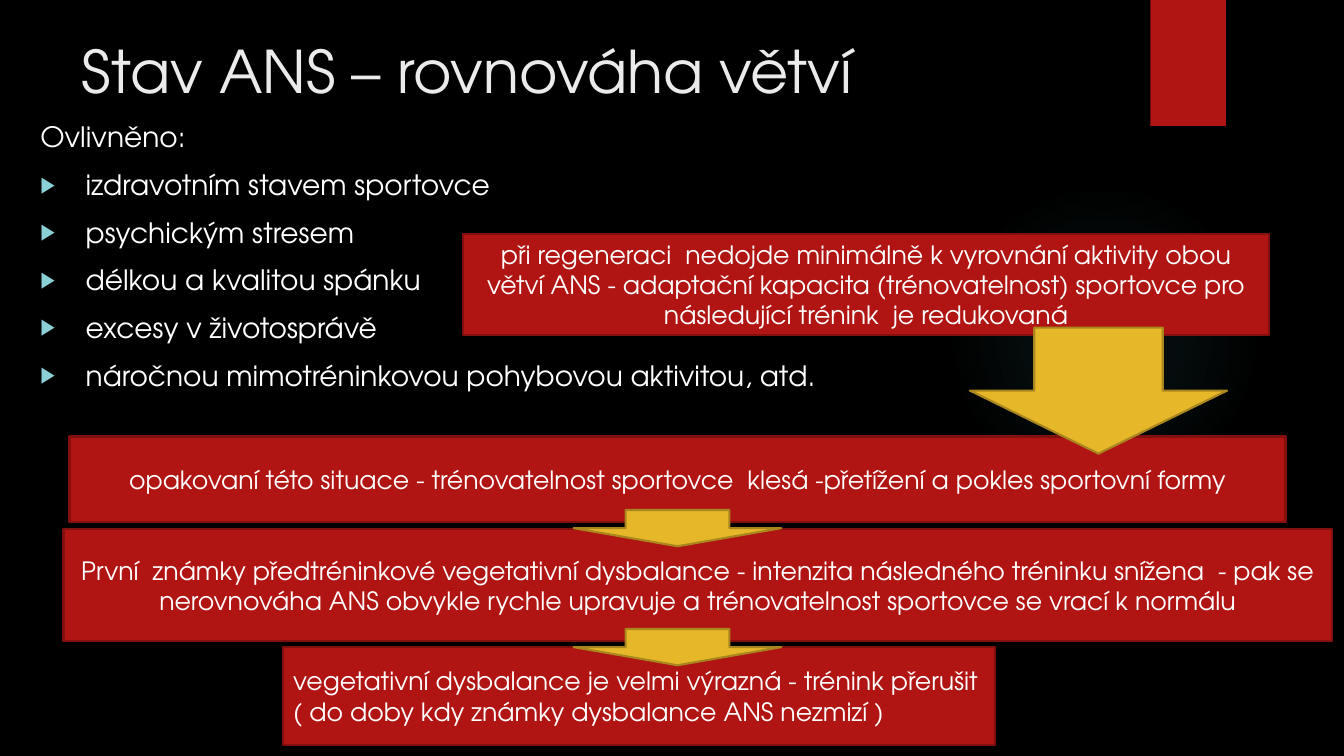
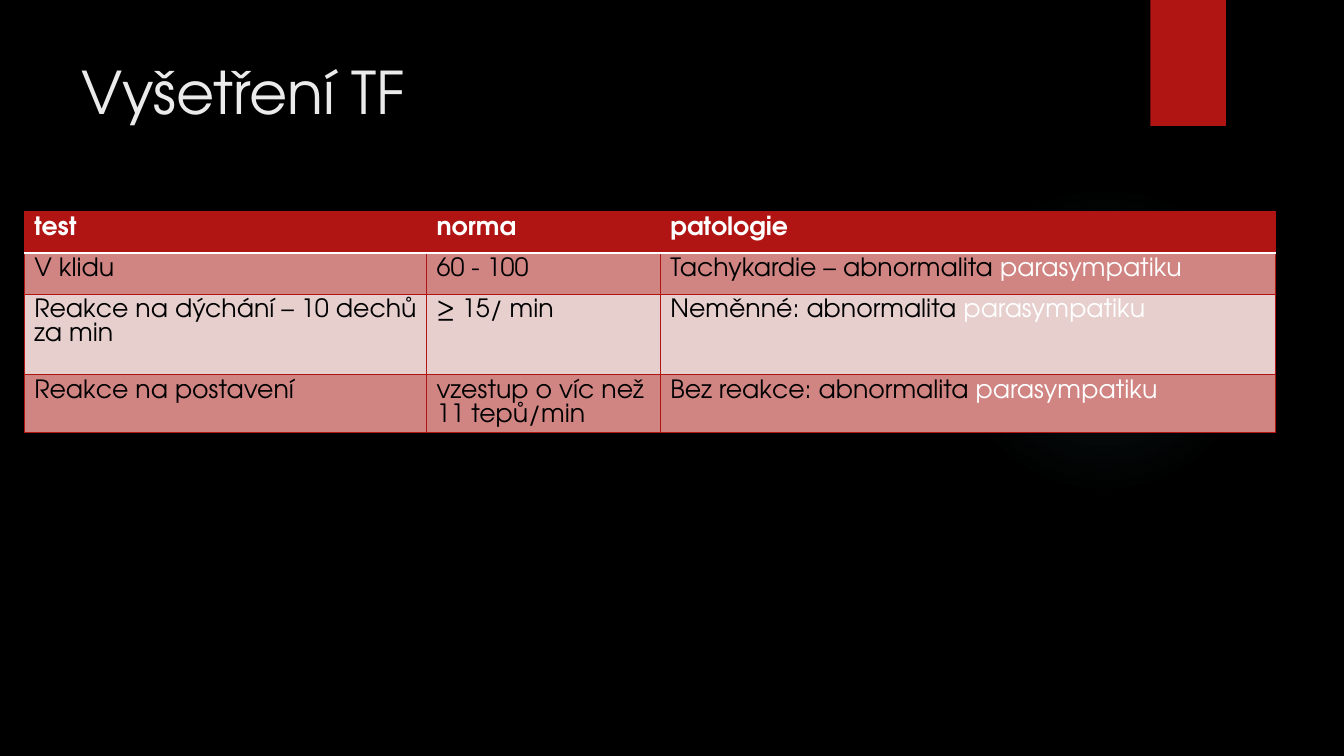
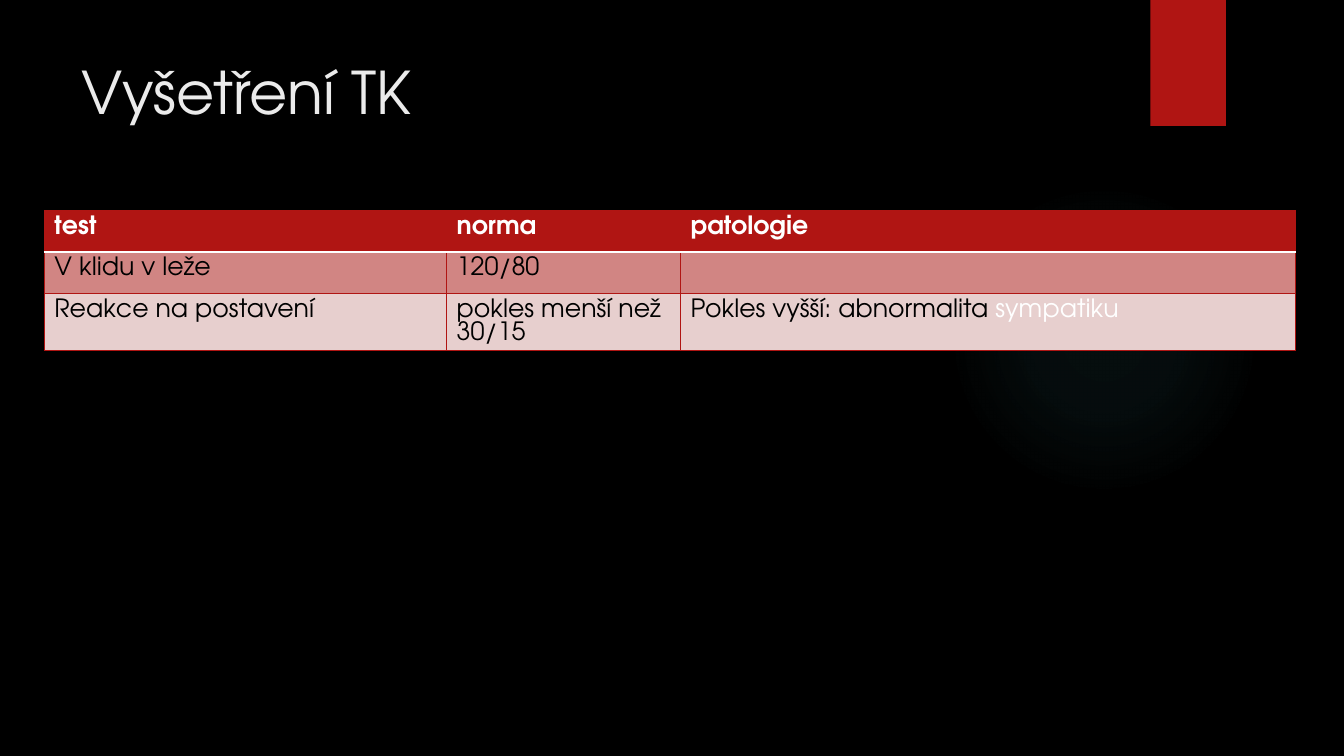
from lxml.etree import SubElement
from pptx import Presentation
from pptx.dml.color import RGBColor
from pptx.enum.shapes import MSO_SHAPE as Shape
from pptx.enum.text import MSO_ANCHOR as Anchor, MSO_AUTO_SIZE as AutoSize, PP_ALIGN as Align
from pptx.oxml import parse_xml
from pptx.oxml.ns import nsdecls, qn
from pptx.util import Inches, Pt

FONT = "TeX Gyre Adventor"
COLORS = {
    "background": "000000",
    "title": "EBEBEB",
    "light": "FFFFFF",
    "dark": "000000",
    "red": "B01513",
    "red_edge": "82100E",
    "yellow": "E6B729",
    "yellow_edge": "AA871E",
    "bullet": "8AD0D6",
    "glow": "50B9C1",
    "band_odd": "D18583",
    "band_even": "E7CFCE",
}
GLOW_STOPS = [(0, 7), (36, 6), (69, 0)]
COLUMN_WIDTHS = [3.99, 2.32, 6.1]
TABLE_HEADER = ["test", "norma", "patologie"]

INFLUENCES = [
    "izdravotním stavem sportovce",
    "psychickým stresem",
    "délkou a kvalitou spánku",
    "excesy v životosprávě",
    "náročnou mimotréninkovou pohybovou aktivitou, atd.",
]
STAGES = [
    ((4.59, 2.32, 8, 1), Align.CENTER,
     "při regeneraci  nedojde minimálně k vyrovnání aktivity obou větví ANS - adaptační "
     "kapacita (trénovatelnost) sportovce pro následující trénink  je redukovaná"),
    ((0.69, 4.33, 12.06, 0.85), Align.CENTER,
     "opakovaní této situace - trénovatelnost sportovce  klesá -přetížení a pokles sportovní formy"),
    ((0.63, 5.25, 12.58, 1.11), Align.CENTER,
     "První  známky předtréninkové vegetativní dysbalance - intenzita následného tréninku "
     "snížena  - pak se nerovnováha ANS obvykle rychle upravuje a trénovatelnost sportovce "
     "se vrací k normálu"),
    ((2.81, 6.42, 7.06, 0.97), Align.LEFT,
     "vegetativní dysbalance je velmi výrazná - trénink přerušit\n"
     "( do doby kdy známky dysbalance ANS nezmizí )"),
]
ARROWS = [(9.62, 3.25, 2.55, 1.25), (5.69, 5.06, 2.06, 0.36), (5.69, 6.24, 2.06, 0.36)]
PULSE_ROWS = [
    ["V klidu", "60 - 100", ("Tachykardie – abnormalita ", "parasympatiku")],
    ["Reakce na dýchání – 10 dechů za min", "≥ 15/ min",
     ("Neměnné: abnormalita ", "parasympatiku")],
    ["Reakce na postavení", "vzestup o víc než 11 tepů/min",
     ("Bez reakce: abnormalita ", "parasympatiku")],
]
PRESSURE_ROWS = [
    ["V klidu v leže", "120/80", ""],
    ["Reakce na postavení", "pokles menší než 30/15",
     ("Pokles vyšší: abnormalita ", "sympatiku")],
]


def color(key):
    """Return the named colour."""
    return RGBColor.from_string(COLORS[key])


def set_font(paragraph, size, key, bold=False):
    """Format a whole paragraph."""
    font = paragraph.font
    font.name, font.size, font.bold = FONT, Pt(size), bold
    font.color.rgb = color(key)


def place(placeholder, box):
    """Move a placeholder and anchor its text at the top."""
    placeholder.left, placeholder.top, placeholder.width, placeholder.height = map(Inches, box)
    frame = placeholder.text_frame
    frame.word_wrap, frame.auto_size = True, AutoSize.NONE
    frame.vertical_anchor = Anchor.TOP
    return frame


def add_preset(slide, preset, box, fill=None, edge=None):
    """Add a flat preset shape."""
    shape = slide.shapes.add_shape(preset, *map(Inches, box))
    shape.shadow.inherit = False
    if fill:
        shape.fill.solid()
        shape.fill.fore_color.rgb = color(fill)
    if edge:
        shape.line.color.rgb = color(edge)
        shape.line.width = Pt(1.5)
    else:
        shape.line.fill.background()
    return shape


def style_master(prs, slide):
    """Give the master its background, glow and red tag."""
    master = prs.slide_master
    master.background.fill.solid()
    master.background.fill.fore_color.rgb = color("background")
    glow = add_preset(slide, Shape.OVAL, (9.41, 1.83, 3.08, 3.08))
    glow.fill.background()
    stops = "".join(
        f'<a:gs pos="{pos * 1000}"><a:srgbClr val="{COLORS["glow"]}">'
        f'<a:alpha val="{alpha * 1000}"/></a:srgbClr></a:gs>'
        for pos, alpha in GLOW_STOPS)
    gradient = parse_xml(
        f'<a:gradFill {nsdecls("a")}><a:gsLst>{stops}</a:gsLst><a:path path="circle">'
        '<a:fillToRect l="50000" t="50000" r="50000" b="50000"/></a:path></a:gradFill>')
    properties = glow.element.spPr
    properties.replace(properties.find(qn("a:noFill")), gradient)
    tag = add_preset(slide, Shape.RECTANGLE, (11.41, 0, 0.75, 1.25), "red")
    for offset, decoration in enumerate((glow, tag)):
        decoration.element.nvSpPr.cNvPr.set("id", str(100 + offset))
        master.shapes.element.insert(2 + offset, decoration.element)


def add_title(slide, text, top=0.5, height=1.53):
    """Fill the title placeholder."""
    frame = place(slide.shapes.title, (0.71, top, 10.29, height))
    frame.text = text
    frame.paragraphs[0].alignment = Align.LEFT
    set_font(frame.paragraphs[0], 42, "title")


def set_bullet(paragraph, bulleted):
    """Set the triangle bullet with its indent, or none."""
    properties = paragraph._p.get_or_add_pPr()
    indent = Inches(0.45) if bulleted else 0
    properties.set("marL", str(indent))
    properties.set("indent", str(-indent))
    if not bulleted:
        SubElement(properties, qn("a:buNone"))
        return
    tint = SubElement(properties, qn("a:buClr"))
    SubElement(tint, qn("a:srgbClr"), val=COLORS["bullet"])
    SubElement(properties, qn("a:buSzPct"), val="80000")
    SubElement(properties, qn("a:buChar"), char="▶")


def add_list(slide, heading, items):
    """Fill the body placeholder with a heading and bulleted items."""
    frame = place(slide.placeholders[1], (0.3, 1.14, 12.58, 5.69))
    frame.text = "\n".join([heading, *items])
    for index, paragraph in enumerate(frame.paragraphs):
        set_bullet(paragraph, index > 0)
        paragraph.space_before = Pt(10 if index else 0)
        set_font(paragraph, 20, "light")


def add_stage(slide, box, alignment, text):
    """Add a red box with text."""
    frame = add_preset(slide, Shape.RECTANGLE, box, "red", "red_edge").text_frame
    frame.word_wrap, frame.vertical_anchor = True, Anchor.MIDDLE
    frame.text = text
    for paragraph in frame.paragraphs:
        paragraph.alignment = alignment
        set_font(paragraph, 18, "light")


def set_borders(cell, row):
    """Draw red cell borders with a white rule under the header."""
    white_side = {0: "lnB", 1: "lnT"}.get(row)
    for side in ("lnL", "lnR", "lnT", "lnB"):
        key, width = ("light", 1.5) if side == white_side else ("red", 0.75)
        line = SubElement(cell._tc.get_or_add_tcPr(), qn(f"a:{side}"), w=str(Pt(width)))
        SubElement(SubElement(line, qn("a:solidFill")), qn("a:srgbClr"), val=COLORS[key])


def fill_cell(cell, row, content):
    """Write and format one table cell."""
    plain, *highlights = [content] if isinstance(content, str) else content
    set_borders(cell, row)
    cell.fill.solid()
    band = "band_odd" if row % 2 else "band_even"
    cell.fill.fore_color.rgb = color(band if row else "red")
    cell.margin_right = Inches(0.05)
    cell.text = plain
    paragraph = cell.text_frame.paragraphs[0]
    set_font(paragraph, 18, "dark" if row else "light", bold=row == 0)
    for text in highlights:
        run = paragraph.add_run()
        run.text = text
        run.font.color.rgb = color("light")


def add_test_table(slide, left, top, rows, heights):
    """Add a table of tests under the shared header."""
    table = slide.shapes.add_table(
        len(heights), len(COLUMN_WIDTHS), Inches(left), Inches(top),
        Inches(sum(COLUMN_WIDTHS)), Inches(sum(heights))).table
    for column, width in zip(table.columns, COLUMN_WIDTHS):
        column.width = Inches(width)
    for index, (contents, height) in enumerate(zip([TABLE_HEADER, *rows], heights)):
        table.rows[index].height = Inches(height)
        for cell, content in zip(table.rows[index].cells, contents):
            fill_cell(cell, index, content)


def main():
    """Build and save the presentation."""
    prs = Presentation()
    prs.slide_width, prs.slide_height = Inches(13.33), Inches(7.5)
    list_layout, title_layout = prs.slide_layouts[1], prs.slide_layouts[5]

    balance = prs.slides.add_slide(list_layout)
    style_master(prs, balance)
    add_title(balance, "Stav ANS – rovnováha větví", 0.29, 1.02)
    add_list(balance, "Ovlivněno:", INFLUENCES)
    for stage in STAGES:
        add_stage(balance, *stage)
    for box in ARROWS:
        add_preset(balance, Shape.DOWN_ARROW, box, "yellow", "yellow_edge")

    pulse = prs.slides.add_slide(title_layout)
    add_title(pulse, "Vyšetření TF")
    add_test_table(pulse, 0.24, 2.1, PULSE_ROWS, [0.41, 0.41, 0.8, 0.57])

    pressure = prs.slides.add_slide(title_layout)
    add_title(pressure, "Vyšetření TK")
    add_test_table(pressure, 0.44, 2.09, PRESSURE_ROWS, [0.41, 0.41, 0.57])

    prs.save("out.pptx")


if __name__ == "__main__":
    main()
